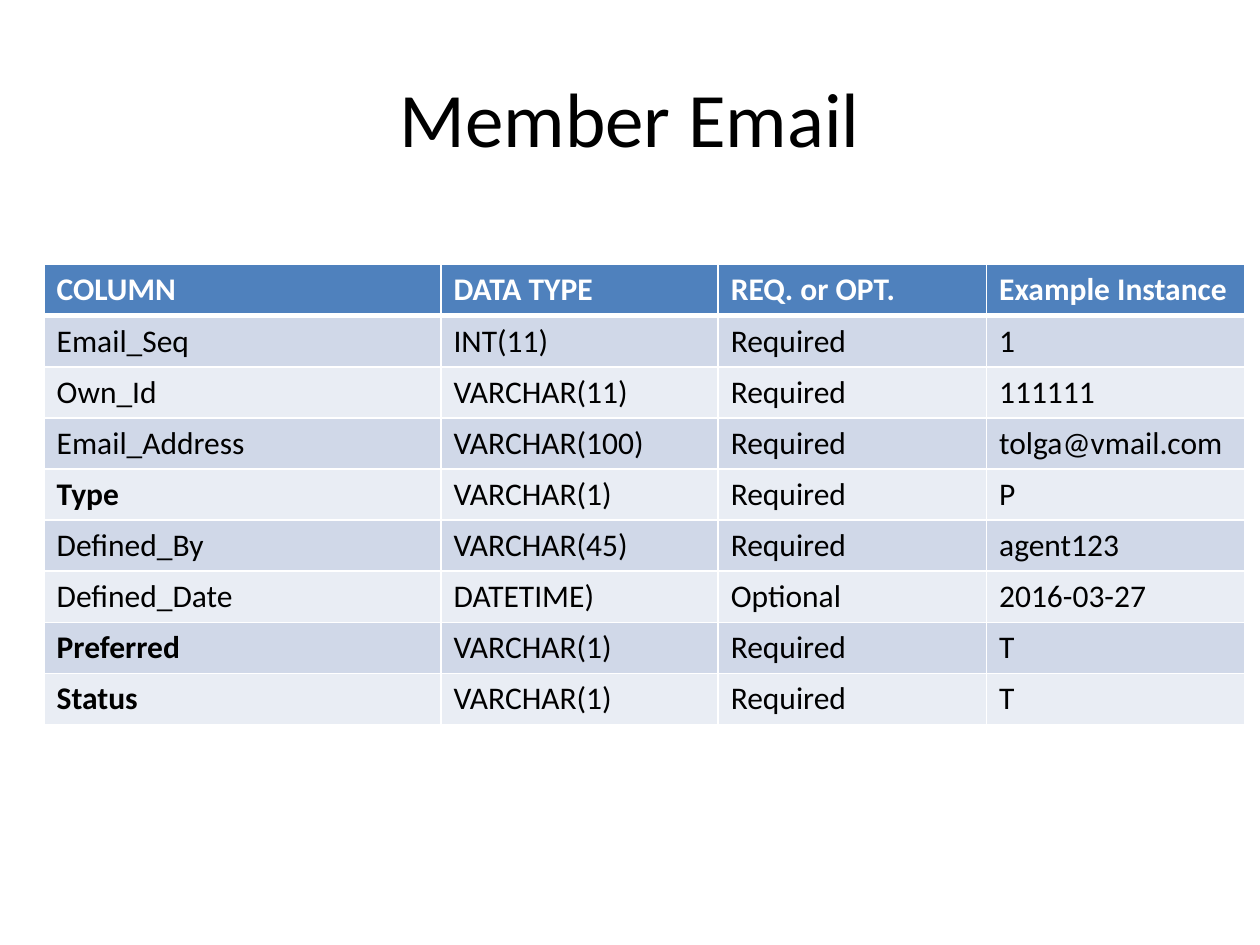
from lxml import etree
from pptx import Presentation, util as u
from pptx.dml.color import RGBColor
from pptx.enum import text
from pptx.oxml.ns import qn

COLORS = {"header": "4F81BD", "odd": "D0D8E8", "even": "E9EDF4",
          "white": "FFFFFF", "black": "000000"}
COLUMN_WIDTHS = [3.15, 2.2, 2.13, 2.05]
ROW_HEIGHT = 3.65 / 9
BOLD_COLUMNS = {"Type", "Preferred", "Status"}
ROWS = [
    ("COLUMN", "DATA TYPE", "REQ. or OPT.", "Example Instance"),
    ("Email_Seq", "INT(11)", "Required", "1"),
    ("Own_Id", "VARCHAR(11)", "Required", "111111"),
    ("Email_Address", "VARCHAR(100)", "Required", "tolga@vmail.com"),
    ("Type", "VARCHAR(1)", "Required", "P"),
    ("Defined_By", "VARCHAR(45)", "Required", "agent123"),
    ("Defined_Date", "DATETIME)", "Optional", "2016-03-27"),
    ("Preferred", "VARCHAR(1)", "Required", "T"),
    ("Status", "VARCHAR(1)", "Required", "T"),
]


def write_text(frame, content, size=18, color="black", bold=False,
               align=text.PP_ALIGN.LEFT, font="Calibri"):
    paragraph = frame.paragraphs[0]
    paragraph.alignment = align
    run = paragraph.add_run()
    run.text = content
    run.font.name = font
    run.font.size = u.Pt(size)
    run.font.bold = bold
    run.font.color.rgb = RGBColor.from_string(COLORS[color])


def add_border(cell, side, width):
    properties = cell._tc.get_or_add_tcPr()
    line = etree.SubElement(properties, qn(f"a:{side}"), w=str(u.Pt(width)))
    fill = etree.SubElement(line, qn("a:solidFill"))
    etree.SubElement(fill, qn("a:srgbClr"), val=COLORS["white"])


class SlideBuilder:
    """Build the elements of one slide in a shared style."""

    def __init__(self, presentation):
        self.slide = presentation.slides.add_slide(presentation.slide_layouts[5])

    def title(self, content):
        shape = self.slide.shapes.title
        shape.left, shape.top = u.Inches(0.5), u.Inches(0.3)
        shape.width, shape.height = u.Inches(9), u.Inches(1.25)
        shape.text_frame.vertical_anchor = text.MSO_ANCHOR.MIDDLE
        write_text(shape.text_frame, content, size=44, align=text.PP_ALIGN.CENTER)

    def table(self, rows, left, top):
        table = self.slide.shapes.add_table(
            len(rows), len(COLUMN_WIDTHS), u.Inches(left), u.Inches(top),
            u.Inches(sum(COLUMN_WIDTHS)), u.Inches(ROW_HEIGHT * len(rows))).table
        for column, width in zip(table.columns, COLUMN_WIDTHS):
            column.width = u.Inches(width)
        for row_index, values in enumerate(rows):
            for column_index, value in enumerate(values):
                self.cell(table.cell(row_index, column_index), value, row_index)

    def cell(self, cell, value, row_index):
        is_header = row_index == 0
        widths = {"lnL": 1, "lnR": 1, "lnT": 3 if row_index == 1 else 1,
                  "lnB": 3 if is_header else 1}
        for side, width in widths.items():
            add_border(cell, side, width)
        fill = "header" if is_header else "odd" if row_index % 2 else "even"
        cell.fill.solid()
        cell.fill.fore_color.rgb = RGBColor.from_string(COLORS[fill])
        write_text(cell.text_frame, value, color="white" if is_header else "black",
                   bold=is_header or value in BOLD_COLUMNS)


def main():
    presentation = Presentation()
    presentation.slide_width = u.Inches(10)
    presentation.slide_height = u.Inches(7.5)
    builder = SlideBuilder(presentation)
    builder.title("Member Email")
    builder.table(ROWS, left=0.35, top=2.1)
    presentation.save("out.pptx")


if __name__ == "__main__":
    main()
